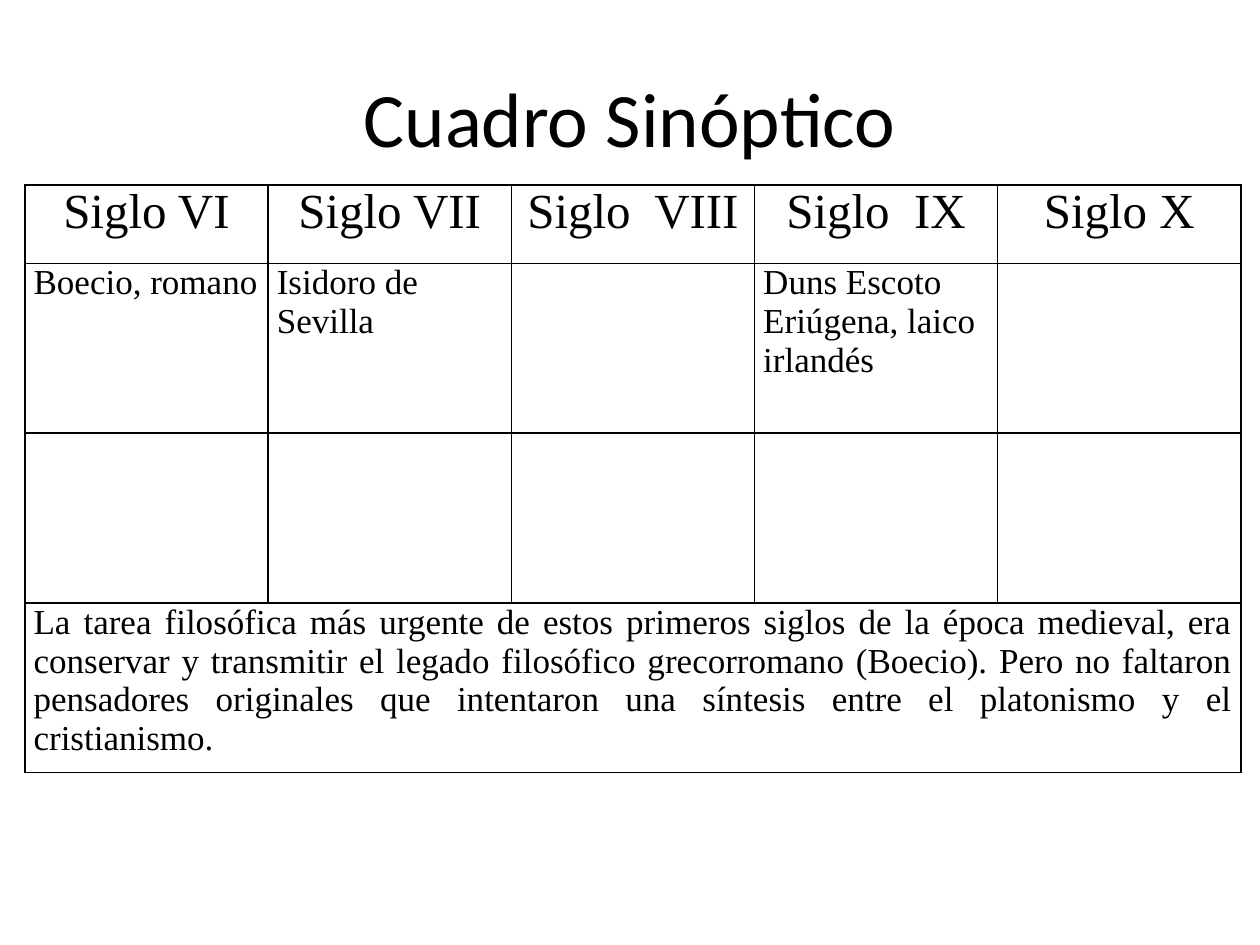
from lxml.etree import fromstring
from pptx import Presentation
from pptx.dml.color import RGBColor as Color
from pptx.enum.text import MSO_ANCHOR as Anchor, PP_ALIGN as Align
from pptx.util import Pt

INK = "000000"
NS = "http://schemas.openxmlformats.org/drawingml/2006/main"
HEADS = ["Siglo VI", "Siglo VII", "Siglo  VIII", "Siglo  IX", "Siglo X"]
NAMES = [["Boecio, romano"], ["Isidoro de Sevilla"], [],
         ["Duns Escoto", "Eriúgena, laico irlandés"], []]
NOTE = ("La tarea filosófica más urgente de estos primeros siglos de la época "
        "medieval, era conservar y transmitir el legado filosófico grecorromano "
        "(Boecio). Pero no faltaron pensadores originales que intentaron una "
        "síntesis entre el platonismo y el cristianismo.")


def paint(font, tone):
    font.color.rgb = Color.from_string(tone)


def write(frame, lines, size, face, align):
    for i, line in enumerate(lines):
        par = frame.paragraphs[0] if i == 0 else frame.add_paragraph()
        par.alignment = align
        run = par.add_run()
        run.text = line
        run.font.size = Pt(size)
        run.font.name = face
        paint(run.font, INK)


def rule(cell):
    props = cell._tc.get_or_add_tcPr()
    for i, side in enumerate("LRTB"):
        props.insert(i, fromstring(
            f'<a:ln{side} xmlns:a="{NS}" w="{Pt(1)}"><a:solidFill>'
            f'<a:srgbClr val="{INK}"/></a:solidFill></a:ln{side}>'))


def title(slide, left, top, width, height):
    box = slide.shapes.add_textbox(Pt(left), Pt(top), Pt(width), Pt(height))
    frame = box.text_frame
    frame.word_wrap = True
    frame.vertical_anchor = Anchor.MIDDLE
    write(frame, ["Cuadro Sinóptico"], 44, "Calibri", Align.CENTER)


def chart(slide, left, top, width, rows):
    count = len(HEADS)
    table = slide.shapes.add_table(len(rows), count, Pt(left), Pt(top),
                                   Pt(width), Pt(sum(rows))).table
    table.first_row = table.horz_banding = False
    for col in table.columns:
        col.width = Pt(width / count)
    for row, high in zip(table.rows, rows):
        row.height = Pt(high)
    for cell in table.iter_cells():
        cell.fill.background()
        cell.margin_left = cell.margin_right = Pt(5)
        cell.margin_top = cell.margin_bottom = 0
        rule(cell)
    last = len(rows) - 1
    table.cell(last, 0).merge(table.cell(last, count - 1))
    face = "Times New Roman"
    for i, (head, names) in enumerate(zip(HEADS, NAMES)):
        write(table.cell(0, i).text_frame, [head], 28, face, Align.CENTER)
        write(table.cell(1, i).text_frame, names, 20, face, Align.LEFT)
    write(table.cell(last, 0).text_frame, [NOTE], 20, face, Align.JUSTIFY)


def main():
    deck = Presentation()
    deck.slide_width, deck.slide_height = Pt(720), Pt(540)
    slide = deck.slides.add_slide(deck.slide_layouts[6])
    title(slide, 36, 21.6, 648, 90)
    chart(slide, 14.2, 105.6, 695, [45, 97, 97, 97])
    deck.save("out.pptx")


if __name__ == "__main__":
    main()
